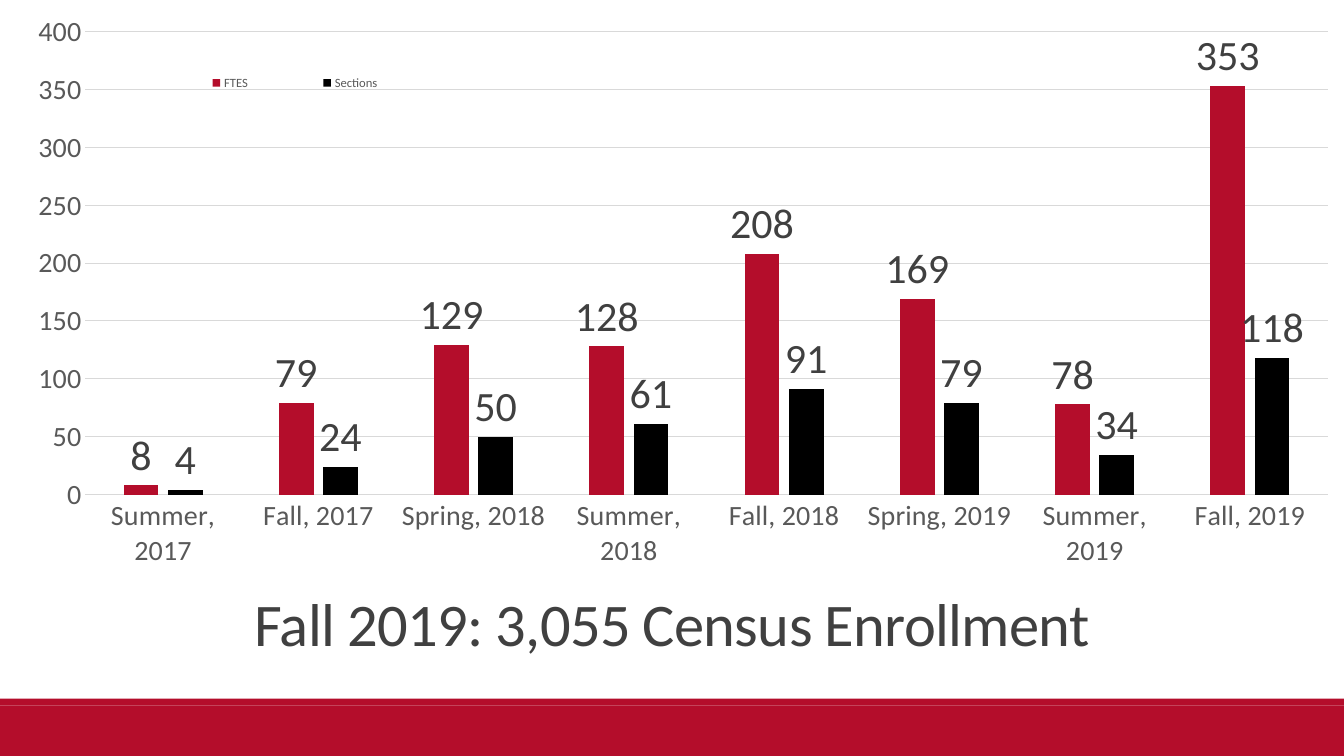
from dataclasses import dataclass

from lxml import etree
from pptx import Presentation
from pptx.chart.data import CategoryChartData
from pptx.dml.color import RGBColor
from pptx.enum.chart import XL_CHART_TYPE, XL_LABEL_POSITION, XL_LEGEND_POSITION, XL_TICK_MARK
from pptx.enum.shapes import MSO_SHAPE
from pptx.enum.text import MSO_ANCHOR, PP_ALIGN
from pptx.oxml.ns import qn
from pptx.util import Inches, Pt

CLUSTERED = XL_CHART_TYPE.COLUMN_CLUSTERED
LABEL_ABOVE = XL_LABEL_POSITION.OUTSIDE_END
LEGEND_TOP = XL_LEGEND_POSITION.TOP
NO_TICK = XL_TICK_MARK.NONE
RECTANGLE = MSO_SHAPE.RECTANGLE
MIDDLE = MSO_ANCHOR.MIDDLE
CENTER = PP_ALIGN.CENTER

SLIDE_WIDTH, SLIDE_HEIGHT = Inches(13.33), Inches(7.5)


@dataclass(frozen=True)
class Theme:
    font: str = "Calibri"
    red: str = "B40D2B"
    black: str = "000000"
    dark: str = "404040"
    gray: str = "595959"
    grid: str = "D9D9D9"
    title_size: float = 43.2
    label_size: float = 30
    axis_size: float = 20
    legend_size: float = 9
    hairline: float = 0.75


THEME = Theme()

TERMS = ["Summer, 2017", "Fall, 2017", "Spring, 2018", "Summer, 2018",
         "Fall, 2018", "Spring, 2019", "Summer, 2019", "Fall, 2019"]
SERIES = [
    ("FTES", THEME.red, [8, 79, 129, 128, 208, 169, 78, 353]),
    ("Sections", THEME.black, [4, 24, 50, 61, 91, 79, 34, 118]),
]

# Boxes as left, top, width, height in shares of the slide
FOOTER_BOX = (0, 0.933, 1, 0.067)
STRIPE_BOX = (0, 0.924, 1, 0.009)
TITLE_BOX = (0, 0.781, 1, 0.099)
CHART_BOX = (0.0285, 0.0187, 0.972, 0.732)
# Boxes in shares of the chart
PLOT_BOX = (0.036, 0.029, 0.951, 0.844)
LEGEND_BOX = (0.079, 0.093, 0.235, 0.06)


def place(box):
    """Turn shares of the slide into lengths."""
    left, top, width, height = box
    return (int(left * SLIDE_WIDTH), int(top * SLIDE_HEIGHT),
            int(width * SLIDE_WIDTH), int(height * SLIDE_HEIGHT))


def style_font(font, size, color):
    font.name = THEME.font
    font.size = Pt(size)
    font.bold = False
    font.color.rgb = RGBColor.from_string(color)


def style_line(line, color):
    line.color.rgb = RGBColor.from_string(color)
    line.width = Pt(THEME.hairline)


def add_bar(slide, box, color):
    shape = slide.shapes.add_shape(RECTANGLE, *place(box))
    shape.shadow.inherit = False
    shape.fill.solid()
    shape.fill.fore_color.rgb = RGBColor.from_string(color)
    shape.line.fill.background()


def add_title(slide, box, text):
    frame = slide.shapes.add_textbox(*place(box)).text_frame
    frame.word_wrap = True
    frame.vertical_anchor = MIDDLE
    paragraph = frame.paragraphs[0]
    paragraph.alignment = CENTER
    paragraph.line_spacing = 0.85
    run = paragraph.add_run()
    run.text = text
    style_font(run.font, THEME.title_size, THEME.dark)
    run.font._element.set("spc", "-50")


def manual_layout(parent, box, inner=False):
    """Build a fixed layout inside a plot area or a legend."""
    for old in parent.findall(qn("c:layout")):
        parent.remove(old)
    layout = etree.Element(qn("c:layout"))
    manual = etree.SubElement(layout, qn("c:manualLayout"))
    settings = [("layoutTarget", "inner")] if inner else []
    settings += [("xMode", "edge"), ("yMode", "edge")]
    settings += zip("xywh", box)
    for tag, value in settings:
        etree.SubElement(manual, qn(f"c:{tag}")).set("val", str(value))
    return layout


def style_axes(chart):
    for axis in (chart.category_axis, chart.value_axis):
        axis.major_tick_mark = axis.minor_tick_mark = NO_TICK
        style_font(axis.tick_labels.font, THEME.axis_size, THEME.gray)
    style_line(chart.category_axis.format.line, THEME.grid)
    values = chart.value_axis
    values.minimum_scale, values.maximum_scale, values.major_unit = 0, 400, 50
    values.format.line.fill.background()
    values.has_major_gridlines = True
    style_line(values.major_gridlines.format.line, THEME.grid)


def style_series(plot):
    plot.gap_width, plot.overlap = 219, -27
    plot.vary_by_categories = False
    for series, (_, color, _) in zip(plot.series, SERIES):
        series.invert_if_negative = False
        series.format.fill.solid()
        series.format.fill.fore_color.rgb = RGBColor.from_string(color)
        labels = series.data_labels
        labels.show_value = True
        labels.position = LABEL_ABOVE
        style_font(labels.font, THEME.label_size, THEME.dark)


def style_legend(chart):
    chart.has_legend = True
    legend = chart.legend
    legend.position = LEGEND_TOP
    legend.include_in_layout = False
    style_font(legend.font, THEME.legend_size, THEME.gray)
    element = legend._element
    layout = manual_layout(element, LEGEND_BOX)
    element.find(qn("c:legendPos")).addnext(layout)


def add_enrollment_chart(slide, box):
    data = CategoryChartData()
    data.categories = TERMS
    for name, _, values in SERIES:
        data.add_series(name, values)
    chart = slide.shapes.add_chart(CLUSTERED, *place(box), data).chart
    chart.has_title = False
    style_font(chart.font, 10, THEME.black)
    style_axes(chart)
    style_series(chart.plots[0])
    style_legend(chart)
    plot_area = chart._chartSpace.chart.plotArea
    plot_area.insert(0, manual_layout(plot_area, PLOT_BOX, inner=True))


def main():
    presentation = Presentation()
    presentation.slide_width, presentation.slide_height = SLIDE_WIDTH, SLIDE_HEIGHT
    slide = presentation.slides.add_slide(presentation.slide_layouts[6])

    # Red footer
    add_bar(slide, FOOTER_BOX, THEME.red)
    add_bar(slide, STRIPE_BOX, THEME.red)

    # Headline and chart
    add_title(slide, TITLE_BOX, "Fall 2019: 3,055 Census Enrollment")
    add_enrollment_chart(slide, CHART_BOX)

    presentation.save("out.pptx")


if __name__ == "__main__":
    main()
